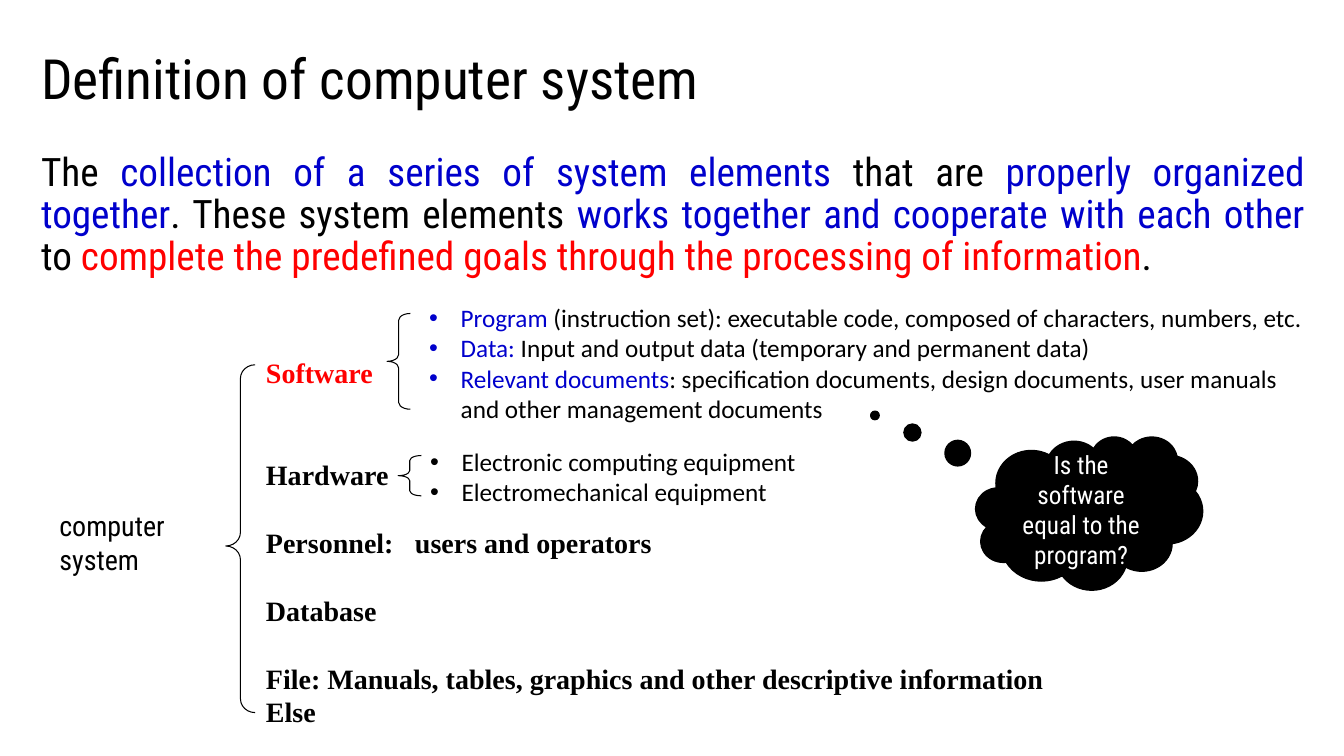
import dataclasses
import typing

import pptx
import pptx.dml.color
import pptx.enum.shapes
import pptx.enum.text
import pptx.util
import lxml.etree

Pt = pptx.util.Pt
Color = pptx.dml.color.RGBColor
Align = pptx.enum.text.PP_ALIGN
Anchor = pptx.enum.text.MSO_ANCHOR
Preset = pptx.enum.shapes.MSO_SHAPE


@dataclasses.dataclass(frozen=True)
class Theme:
    black: Color = Color(0x00, 0x00, 0x00)
    white: Color = Color(0xFF, 0xFF, 0xFF)
    blue: Color = Color(0x00, 0x00, 0xCC)
    red: Color = Color(0xFF, 0x00, 0x00)
    heading_font: str = "Roboto Condensed"
    list_font: str = "Calibri"
    branch_font: str = "Times New Roman"
    title_size: float = 39.6
    body_size: float = 28
    branch_size: float = 20
    detail_size: float = 18


THEME = Theme()


class Area(typing.NamedTuple):
    left: float
    top: float
    width: float
    height: float

    def lengths(self) -> list[int]:
        return [Pt(value) for value in self]


class Span(typing.NamedTuple):
    text: str
    color: Color = THEME.black


@dataclasses.dataclass(frozen=True)
class Para:
    spans: list[Span]
    space_before: float = 0
    tab: float = 0


@dataclasses.dataclass(frozen=True)
class Box:
    area: Area
    paras: list[Para]
    font: str
    size: float
    align: Align = Align.LEFT
    bold: bool = False
    bullets: bool = False
    wrap: bool = True
    line_spacing: float = 1
    anchor: Anchor = Anchor.TOP


@dataclasses.dataclass(frozen=True)
class Brace:
    area: Area
    curve: float
    tip: float


BULLET_INDENT = 22.5
BRANCH_GAP = 24.4

BOXES = [
    Box(Area(22.3, 31, 713.5, 54), [Para([Span("Definition of computer system")])],
        THEME.heading_font, THEME.title_size, line_spacing=0.9, anchor=Anchor.MIDDLE),
    Box(Area(22.3, 105.1, 916.6, 104.4), [Para([
        Span("The "),
        Span("collection of a series of system elements ", THEME.blue),
        Span("that are "),
        Span("properly organized together", THEME.blue),
        Span(". These system elements "),
        Span("works together and cooperate with each other ", THEME.blue),
        Span("to "),
        Span("complete the predefined goals through the processing of information", THEME.red),
        Span("."),
    ])], THEME.heading_font, THEME.body_size, Align.JUSTIFY, line_spacing=0.9),
    Box(Area(35.3, 360, 131, 33.8), [Para([Span("computer system")])],
        THEME.heading_font, THEME.branch_size, Align.JUSTIFY),
    Box(Area(182.9, 250.6, 598.3, 253.4), [
        Para([Span("Software", THEME.red)]),
        Para([Span("Hardware")], 2 * BRANCH_GAP),
        Para([Span("Personnel:\tusers and operators")], BRANCH_GAP, tab=106.4),
        Para([Span("Database")], BRANCH_GAP),
        Para([Span("File: Manuals, tables, graphics and other descriptive information")], BRANCH_GAP),
        Para([Span("Else")]),
    ], THEME.branch_font, THEME.branch_size, Align.JUSTIFY, bold=True),
    Box(Area(299.5, 212.4, 644.4, 94.3), [
        Para([Span("Program", THEME.blue),
              Span(" (instruction set): executable code, composed of characters, numbers, etc.")]),
        Para([Span("Data: ", THEME.blue),
              Span("Input and output data (temporary and permanent data)")]),
        Para([Span("Relevant documents", THEME.blue),
              Span(": specification documents, design documents, user manuals "
                   "and other management documents")]),
    ], THEME.list_font, THEME.detail_size, bullets=True),
    Box(Area(300.2, 315.4, 278.6, 51.1), [
        Para([Span("Electronic computing equipment")]),
        Para([Span("Electromechanical equipment")]),
    ], THEME.list_font, THEME.detail_size, bullets=True, wrap=False),
]

BRACES = [
    Brace(Area(161.3, 260.6, 20.9, 248.4), 0.469, 0.521),
    Brace(Area(276.5, 223.9, 16.6, 68.4), 0.289, 0.5),
    Brace(Area(284.4, 325.4, 16.6, 28.8), 0.217, 0.5),
]

CLOUD = Box(Area(697, 311.8, 162, 109.4),
            [Para([Span("Is the software equal to the program?", THEME.white)])],
            THEME.heading_font, THEME.detail_size, Align.CENTER, anchor=Anchor.MIDDLE)
CLOUD_TAIL = (-0.945, -0.638)


def add_property(parent, tag: str, **attributes: str):
    name = pptx.oxml.ns.qn(tag)
    return lxml.etree.SubElement(parent, name, attributes)


def write_text(frame, box: Box) -> None:
    frame.word_wrap = box.wrap
    frame.vertical_anchor = box.anchor
    for index, para in enumerate(box.paras):
        paragraph = frame.paragraphs[0] if index == 0 else frame.add_paragraph()
        properties = paragraph._p.get_or_add_pPr()
        if box.bullets:
            properties.set("marL", str(Pt(BULLET_INDENT)))
            properties.set("indent", str(-Pt(BULLET_INDENT)))
            add_property(properties, "a:buFont", typeface="Arial")
            add_property(properties, "a:buChar", char="•")
        if para.tab:
            tabs = add_property(properties, "a:tabLst")
            add_property(tabs, "a:tab", pos=str(Pt(para.tab)), algn="l")
        paragraph.alignment = box.align
        paragraph.line_spacing = box.line_spacing
        paragraph.space_before = Pt(para.space_before)
        paragraph.font.name = box.font
        paragraph.font.size = Pt(box.size)
        paragraph.font.bold = box.bold
        for span in para.spans:
            run = paragraph.add_run()
            run.text = span.text
            run.font.color.rgb = span.color


def add_text(page, box: Box) -> None:
    write_text(page.shapes.add_textbox(*box.area.lengths()).text_frame, box)


def add_outline(page, preset: Preset, area: Area, adjustments: tuple[float, ...], weight: float):
    shape = page.shapes.add_shape(preset, *area.lengths())
    shape.shadow.inherit = False
    for index, value in enumerate(adjustments):
        shape.adjustments[index] = value
    shape.fill.background()
    shape.line.color.rgb = THEME.black
    shape.line.width = Pt(weight)
    return shape


def add_cloud(page, box: Box) -> None:
    cloud = add_outline(page, Preset.CLOUD_CALLOUT, box.area, CLOUD_TAIL, 1)
    cloud.fill.solid()
    cloud.fill.fore_color.rgb = THEME.black
    write_text(cloud.text_frame, box)


def main() -> None:
    deck = pptx.Presentation()
    deck.slide_width, deck.slide_height = Pt(960), Pt(540)
    page = deck.slides.add_slide(deck.slide_layouts[6])
    for box in BOXES:
        add_text(page, box)
    for brace in BRACES:
        add_outline(page, Preset.LEFT_BRACE, brace.area, (brace.curve, brace.tip), 0.75)
    add_cloud(page, CLOUD)
    deck.save("out.pptx")


if __name__ == "__main__":
    main()
